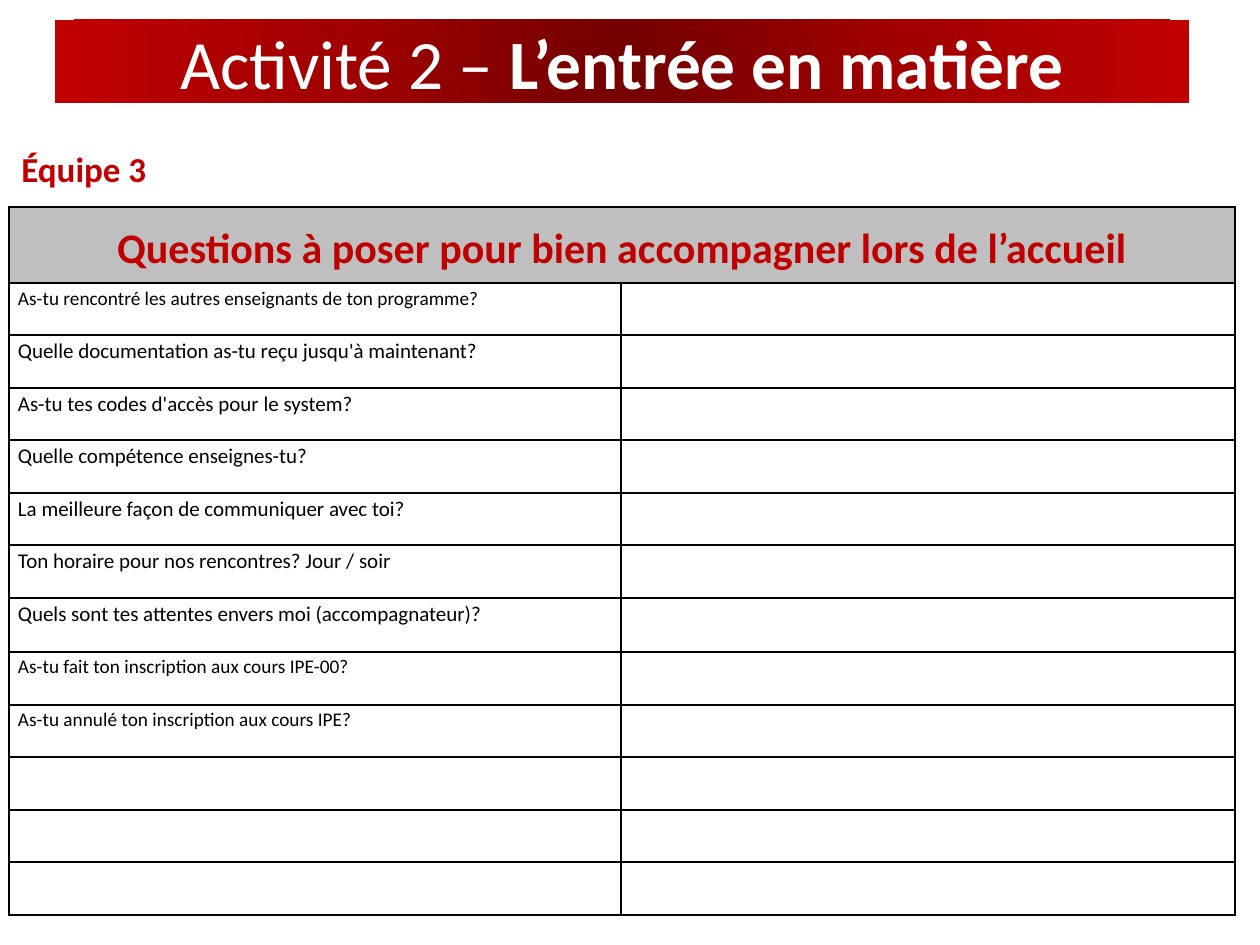
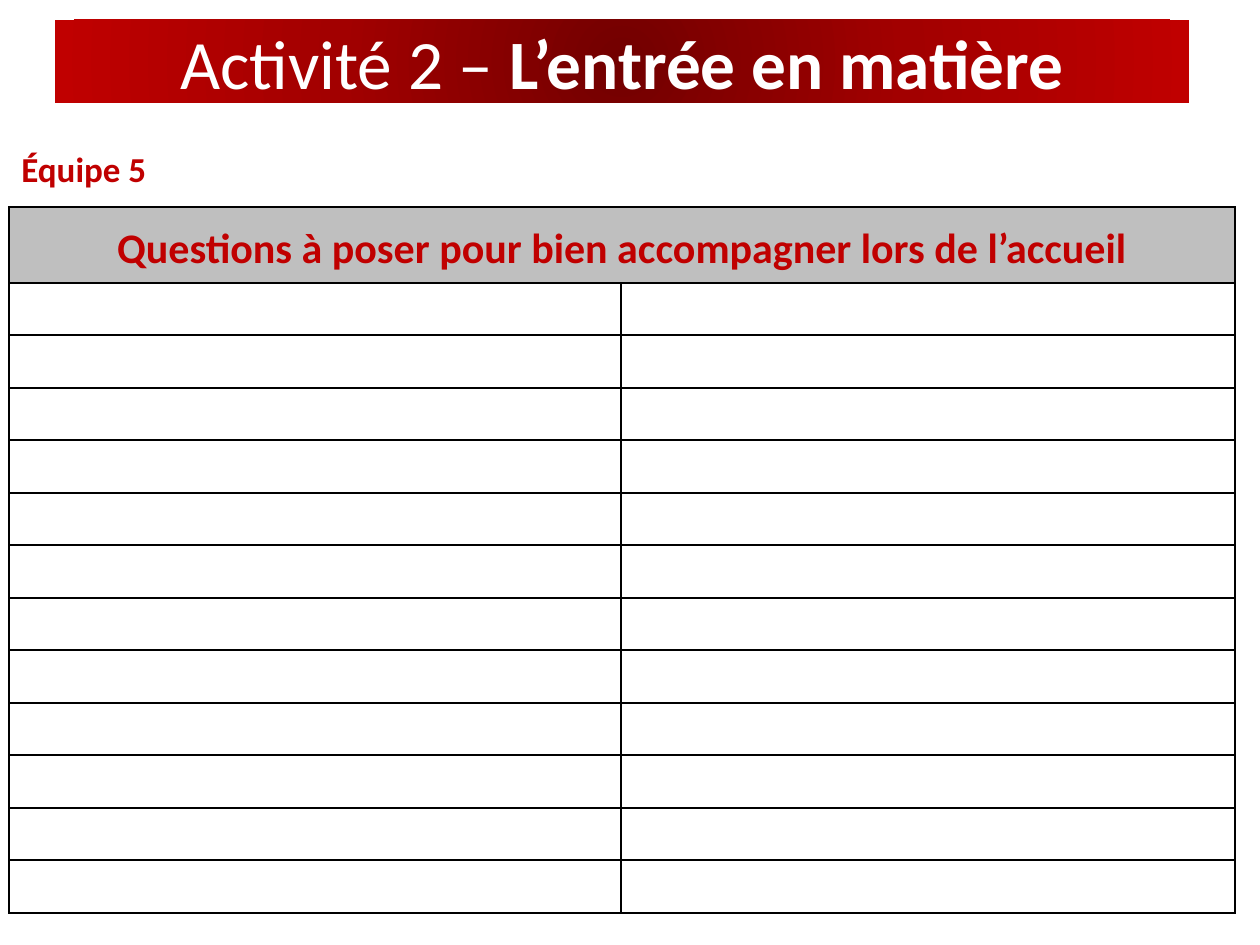
from lxml import etree
from pptx import Presentation
from pptx import util as u
from pptx.dml.color import RGBColor
from pptx.enum import text
from pptx.oxml import parse_xml
from pptx.oxml.ns import nsdecls, qn

PX = 914400 / 126
FONT = "Calibri"
COLORS = {
    "red": "C00000", "mid_red": "A20000", "dark_red": "720000",
    "grey": "BFBFBF", "black": "000000", "white": "FFFFFF",
}
HEADING = "Questions à poser pour bien accompagner lors de l’accueil"
QUESTION_ROWS = 12
COLUMN_WIDTHS = (612, 614)
HEADING_HEIGHT = 76

TITLE_GRADIENT = f"""
<a:gradFill {nsdecls("a")} rotWithShape="1">
  <a:gsLst>
    <a:gs pos="0"><a:srgbClr val="{COLORS["dark_red"]}"/></a:gs>
    <a:gs pos="50000"><a:srgbClr val="{COLORS["mid_red"]}"/></a:gs>
    <a:gs pos="100000"><a:srgbClr val="{COLORS["red"]}"/></a:gs>
  </a:gsLst>
  <a:path path="circle"><a:fillToRect l="50000" t="50000" r="50000" b="50000"/></a:path>
</a:gradFill>"""

# Team name, (question, size) pairs, and heights of rows that differ
teams = [
    ("Équipe 3", [
        ("As-tu rencontré les autres enseignants de ton programme?", 11),
        ("Quelle documentation as-tu reçu jusqu'à maintenant?", 12),
        ("As-tu tes codes d'accès pour le system?\u00a0", 12),
        ("Quelle compétence enseignes-tu?", 12),
        ("La meilleure façon de communiquer avec toi?", 12),
        ("Ton horaire pour nos rencontres? Jour / soir", 12),
        ("Quels sont tes attentes envers moi (accompagnateur)?", 12),
        ("As-tu fait ton inscription aux cours IPE-00?", 11),
        ("As-tu annulé ton inscription aux cours IPE?", 11),
    ], {6: 54}),
    ("Équipe 5", [], {}),
]


def px(*lengths):
    return [u.Emu(round(n * PX)) for n in lengths]


def add_run(p, words, size, color, bold=False):
    r = p.add_run()
    r.text = words
    r.font.name = FONT
    r.font.size = u.Pt(size)
    r.font.bold = bold
    r.font.color.rgb = RGBColor.from_string(COLORS[color])


prs = Presentation()
prs.slide_width, prs.slide_height = px(1260, 945)

for team, questions, special_heights in teams:
    s = prs.slides.add_slide(prs.slide_layouts[5])

    # Title band
    title = s.shapes.title
    title.left, title.top, title.width, title.height = px(55, 20, 1134, 83)
    title._element.spPr.append(parse_xml(TITLE_GRADIENT))
    tf = title.text_frame
    tf.auto_size = text.MSO_AUTO_SIZE.NONE
    tf.vertical_anchor = text.MSO_ANCHOR.MIDDLE
    p = tf.paragraphs[0]
    p.alignment = text.PP_ALIGN.CENTER
    add_run(p, "Activité 2 – ", 39.6, "white")
    add_run(p, "L’entrée en matière", 39.6, "white", bold=True)

    # Question table: rows alternate between 52 and 53 px
    heights = [special_heights.get(i, 52 + i % 2) for i in range(QUESTION_ROWS)]
    heights.insert(0, HEADING_HEIGHT)
    frame = s.shapes.add_table(
        len(heights), 2, *px(9, 207, sum(COLUMN_WIDTHS), sum(heights)))
    table = frame.table
    table.first_row = table.horz_banding = False
    for column, width in zip(table.columns, px(*COLUMN_WIDTHS)):
        column.width = width
    for row, height in zip(table.rows, px(*heights)):
        row.height = height

    for cell in table.iter_cells():
        cell.margin_left, cell.margin_right = px(9, 9)
        cell.margin_top = cell.margin_bottom = 0
        tcPr = cell._tc.get_or_add_tcPr()
        for side in "LRTB":
            ln = etree.SubElement(tcPr, qn(f"a:ln{side}"), w=str(u.Pt(1)))
            fill = etree.SubElement(ln, qn("a:solidFill"))
            etree.SubElement(fill, qn("a:srgbClr"), val=COLORS["black"])
        cell.fill.background()

    heading = table.cell(0, 0)
    heading.merge(table.cell(0, 1))
    heading.fill.solid()
    heading.fill.fore_color.rgb = RGBColor.from_string(COLORS["grey"])
    heading.vertical_anchor = text.MSO_ANCHOR.MIDDLE
    p = heading.text_frame.paragraphs[0]
    p.alignment = text.PP_ALIGN.CENTER
    add_run(p, HEADING, 24, "red", bold=True)

    for i, (question, size) in enumerate(questions, start=1):
        p = table.cell(i, 0).text_frame.paragraphs[0]
        add_run(p, question, size, "black")
    for i in range(len(questions) + 1):
        p = table.cell(i, 0).text_frame.paragraphs[0]
        p.line_spacing = 1.15
        p.space_after = u.Pt(10)

    # Team label
    tf = s.shapes.add_textbox(*px(9, 141, 354, 55)).text_frame
    tf.word_wrap = True
    tf.auto_size = text.MSO_AUTO_SIZE.SHAPE_TO_FIT_TEXT
    add_run(tf.paragraphs[0], team, 20, "red", bold=True)

prs.save("out.pptx")
